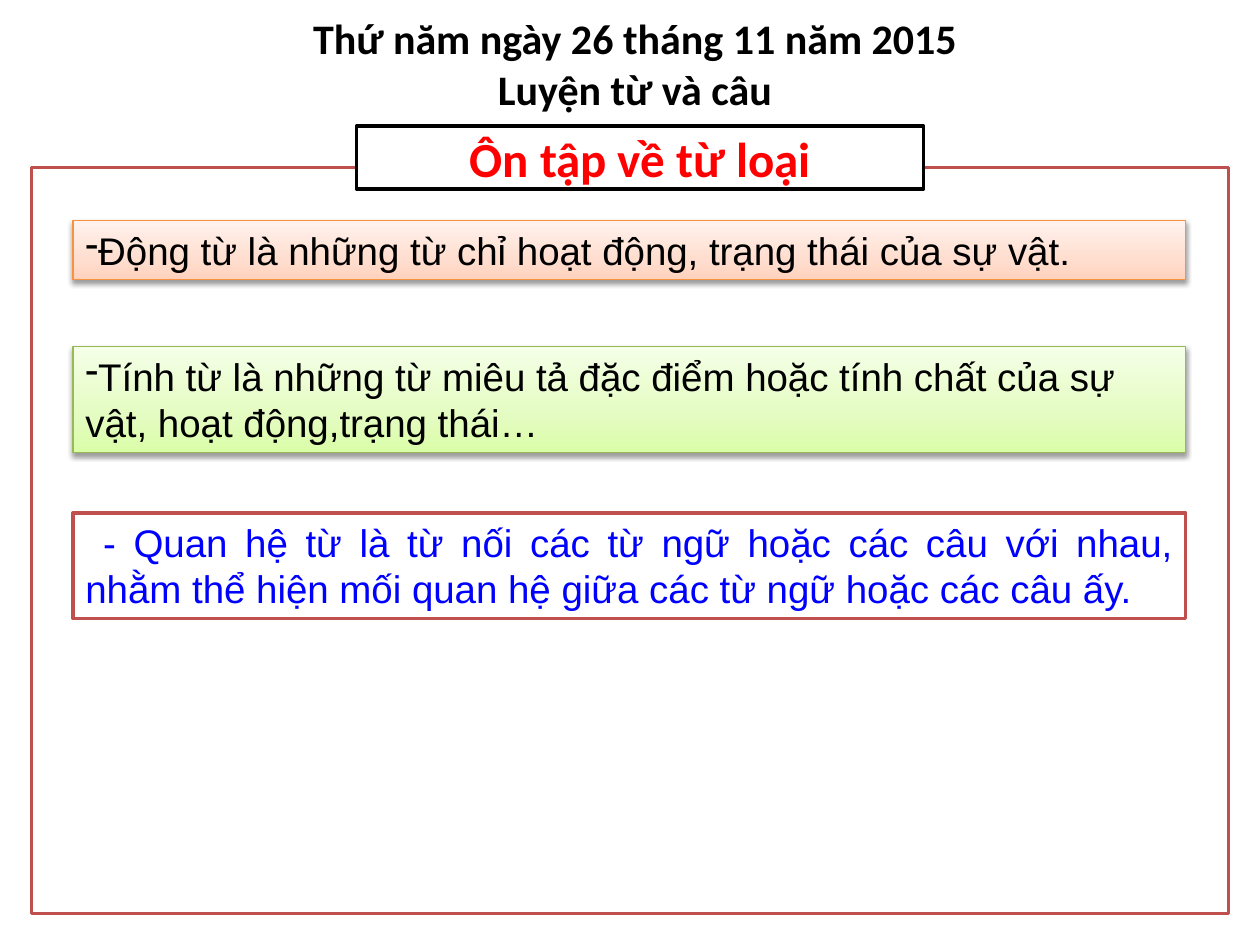
import pptx
import pptx.util
import pptx.dml.color
import pptx.enum.shapes
import pptx.enum.text
import pptx.oxml.ns
import lxml.etree

Inches, Pt = pptx.util.Inches, pptx.util.Pt
ALIGN = pptx.enum.text.PP_ALIGN
ANCHOR = pptx.enum.text.MSO_ANCHOR
FIT = pptx.enum.text.MSO_AUTO_SIZE
qn = pptx.oxml.ns.qn

TITLE = "Thứ năm ngày 26 tháng 11 năm 2015\vLuyện từ và câu"
TOPIC = "Ôn tập về từ loại"
DEFINITIONS = [
    dict(text="Động từ là những từ chỉ hoạt động, trạng thái của sự vật.",
         top=1.75, height=0.47, align=ALIGN.JUSTIFY, color="000000",
         line="F69240", gradient=["FFD2BD", "FFDED0", "FFF2ED"]),
    dict(text="Tính từ là những từ miêu tả đặc điểm hoặc tính chất của sự vật, "
              "hoạt động,trạng thái…",
         top=2.75, height=0.84, align=ALIGN.LEFT, color="000000",
         line="98B955", gradient=["DAFDA7", "E4FCC2", "F5FFE7"]),
    dict(text=" - Quan hệ từ là từ nối các từ ngữ hoặc các câu với nhau, "
              "nhằm thể hiện mối quan hệ giữa các từ ngữ hoặc các câu ấy.",
         top=4.07, height=0.84, align=ALIGN.JUSTIFY, color="0000FF",
         line="C0504D", gradient=None),
]
STOPS = [0, 35000, 100000]


def rgb(value):
    return pptx.dml.color.RGBColor.from_string(value)


def sub(parent, tag, **attrs):
    return lxml.etree.SubElement(parent, qn(tag), attrs)


def add_box(slide, left, top, width, height, line, weight=2):
    sp = slide.shapes.add_shape(pptx.enum.shapes.MSO_SHAPE.RECTANGLE,
                                Inches(left), Inches(top), Inches(width), Inches(height))
    sp.shadow.inherit = False
    sp.fill.solid()
    sp.fill.fore_color.rgb = rgb("FFFFFF")
    sp.line.color.rgb = rgb(line)
    sp.line.width = Pt(weight)
    return sp


def write(sp, text, font, size, color, align, bold=False, anchor=ANCHOR.MIDDLE, fit=FIT.NONE):
    tf = sp.text_frame
    tf.text = text
    tf.word_wrap = True
    tf.auto_size = fit
    tf.vertical_anchor = anchor
    p = tf.paragraphs[0]
    p.alignment = align
    p.font.name, p.font.size, p.font.bold = font, Pt(size), bold
    p.font.color.rgb = rgb(color)
    return p


def add_gradient(sp, colors):
    sp.fill.gradient()
    sp.fill.gradient_angle = 90
    stops = sp._element.spPr.find(".//" + qn("a:gsLst"))
    for gs in list(stops):
        stops.remove(gs)
    for pos, color in zip(STOPS, colors):
        sub(sub(stops, "a:gs", pos=str(pos)), "a:srgbClr", val=color)


def add_shadow(sp):
    effects = sp._element.spPr.find(qn("a:effectLst"))
    shadow = sub(effects, "a:outerShdw", blurRad=str(Pt(3.1)), dist=str(Pt(1.6)),
                 dir="5400000", rotWithShape="0")
    sub(sub(shadow, "a:srgbClr", val="000000"), "a:alpha", val="38000")


def add_dash(p):
    pPr = p._p.get_or_add_pPr()
    pPr.set("marL", "0")
    pPr.set("indent", "0")
    bullet = lxml.etree.Element(qn("a:buChar"), char="-")
    pPr.insert_element_before(bullet, "a:tabLst", "a:defRPr", "a:extLst")


def add_definition(slide, item):
    sp = add_box(slide, 0.58, item["top"], 8.83, item["height"], item["line"],
                 0.75 if item["gradient"] else 2)
    p = write(sp, item["text"], "Arial", 22, item["color"], item["align"],
              anchor=ANCHOR.TOP, fit=FIT.SHAPE_TO_FIT_TEXT)
    if item["gradient"]:
        add_gradient(sp, item["gradient"])
        add_shadow(sp)
        add_dash(p)


def main():
    prs = pptx.Presentation()
    prs.slide_width, prs.slide_height = Inches(10), Inches(7.5)
    slide = prs.slides.add_slide(prs.slide_layouts[5])

    title = slide.shapes.title
    title.left, title.top = Inches(0.33), Inches(0)
    title.width, title.height = Inches(9.42), Inches(1)
    write(title, TITLE, "Calibri", 24, "000000", ALIGN.CENTER, bold=True)

    add_box(slide, 0.25, 1.33, 9.5, 5.92, "C0504D")
    topic = add_box(slide, 2.83, 1, 4.5, 0.5, "000000")
    write(topic, TOPIC, "Calibri", 28, "FF0000", ALIGN.CENTER, bold=True)
    for item in DEFINITIONS:
        add_definition(slide, item)

    prs.save("out.pptx")


if __name__ == "__main__":
    main()
